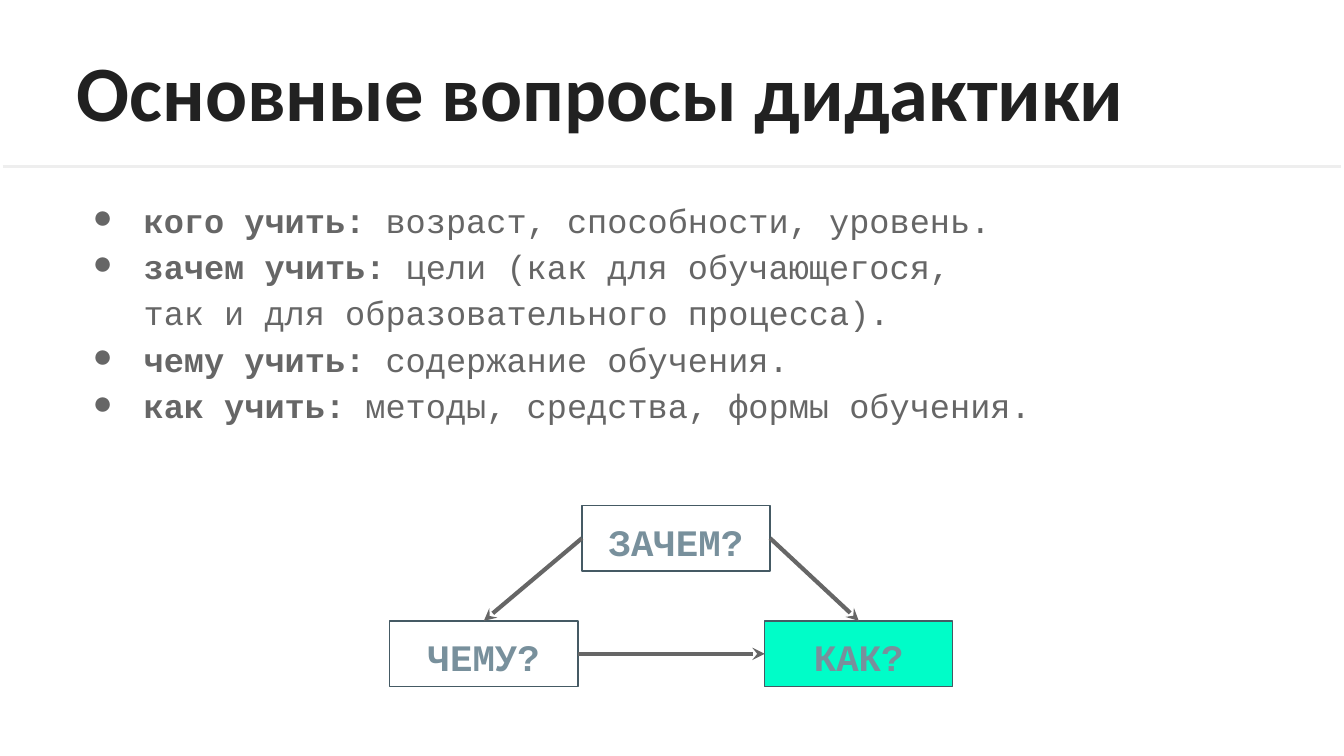
from lxml import etree
from pptx import Presentation
from pptx.dml.color import RGBColor
from pptx.enum.shapes import MSO_CONNECTOR, MSO_SHAPE
from pptx.enum.text import MSO_ANCHOR, MSO_AUTO_SIZE, PP_ALIGN
from pptx.oxml.ns import qn
from pptx.util import Inches, Pt

LEFT, CENTER = PP_ALIGN.LEFT, PP_ALIGN.CENTER
TOP = MSO_ANCHOR.TOP
NO_FIT = MSO_AUTO_SIZE.NONE
STRAIGHT = MSO_CONNECTOR.STRAIGHT
RECT = MSO_SHAPE.RECTANGLE
TOP_SIDE, LEFT_SIDE, RIGHT_SIDE = 0, 1, 3
MONO = "Courier New"
GRAY = "666666"

ITEMS = [
    ("кого учить:", " возраст, способности, уровень."),
    ("зачем учить:", " цели (как для обучающегося, \n"
                     "так и для образовательного процесса)."),
    ("чему учить:", " содержание обучения."),
    ("как учить:", " методы, средства, формы обучения."),
]


def color(code):
    return RGBColor.from_string(code)


def set_frame(frame):
    frame.word_wrap = True
    frame.auto_size = NO_FIT
    frame.vertical_anchor = TOP
    frame.margin_left = frame.margin_right = Inches(0.1)
    frame.margin_top = frame.margin_bottom = Inches(0.1)


def write(para, text, size=18, font=MONO, ink=GRAY, bold=False, align=LEFT):
    """Add text to a paragraph, with a line break at each newline."""
    para.alignment = align
    for i, part in enumerate(text.split("\n")):
        if i:
            para.add_line_break()
        run = para.add_run()
        run.text = part
        run.font.size = Pt(size)
        run.font.name = font
        run.font.bold = bold
        run.font.color.rgb = color(ink)


def add_bullet(para):
    props = para._p.get_or_add_pPr()
    props.set("marL", str(Inches(0.5)))
    props.set("indent", str(Inches(-0.38)))
    tint = etree.SubElement(props, qn("a:buClr"))
    etree.SubElement(tint, qn("a:srgbClr"), val=GRAY)
    etree.SubElement(props, qn("a:buFont"), typeface=MONO)
    etree.SubElement(props, qn("a:buChar"), char="●")


def add_title(slide, text):
    title = slide.shapes.title
    title.left, title.top = Inches(0.47), Inches(0.22)
    title.width, title.height = Inches(9.12), Inches(0.67)
    set_frame(title.text_frame)
    write(title.text_frame.paragraphs[0], text, size=42, font="Calibri",
          ink="212121", bold=True)


def add_list(slide, items):
    box = slide.shapes.add_textbox(
        Inches(0.47), Inches(1.34), Inches(9.12), Inches(1.95))
    frame = box.text_frame
    set_frame(frame)
    for i, (term, note) in enumerate(items):
        para = frame.add_paragraph() if i else frame.paragraphs[0]
        add_bullet(para)
        para.line_spacing = 1.15
        write(para, term, bold=True)
        write(para, note)


def add_box(slide, text, left, top, fill="FFFFFF"):
    box = slide.shapes.add_shape(
        RECT, Inches(left), Inches(top), Inches(1.4), Inches(0.49))
    box.shadow.inherit = False
    box.fill.solid()
    box.fill.fore_color.rgb = color(fill)
    box.line.color.rgb = color("455A64")
    box.line.width = Pt(0.75)
    set_frame(box.text_frame)
    write(box.text_frame.paragraphs[0], text, size=20, ink="78909C",
          bold=True, align=CENTER)
    return box


def add_line(slide, start, end, ink, width):
    line = slide.shapes.add_connector(STRAIGHT, *start, *end)
    line.line.color.rgb = color(ink)
    line.line.width = Pt(width)
    etree.SubElement(line._element.spPr, qn("a:effectLst"))
    return line


def add_arrow(slide, source, exit_side, target, entry_side):
    arrow = add_line(slide, (0, 0), (0, 0), GRAY, 2.25)
    arrow.begin_connect(source, exit_side)
    arrow.end_connect(target, entry_side)
    etree.SubElement(arrow.line._get_or_add_ln(), qn("a:tailEnd"),
                     type="stealth")


def main():
    deck = Presentation()
    deck.slide_width = Inches(10)
    deck.slide_height = Inches(10) * 9 // 16
    slide = deck.slides.add_slide(deck.slide_layouts[5])

    add_title(slide, "Основные вопросы дидактики")
    add_list(slide, ITEMS)

    why = add_box(slide, "ЗАЧЕМ?", 4.33, 3.76)
    what = add_box(slide, "ЧЕМУ?", 2.9, 4.62)
    how = add_box(slide, "КАК?", 5.69, 4.62, fill="00FDC8")
    add_arrow(slide, why, LEFT_SIDE, what, TOP_SIDE)
    add_arrow(slide, why, RIGHT_SIDE, how, TOP_SIDE)
    add_arrow(slide, what, RIGHT_SIDE, how, LEFT_SIDE)
    add_line(slide, (Inches(0.02), Inches(1.24)),
             (Inches(9.98), Inches(1.24)), "EEEEEE", 1.5)

    deck.save("out.pptx")


if __name__ == "__main__":
    main()
